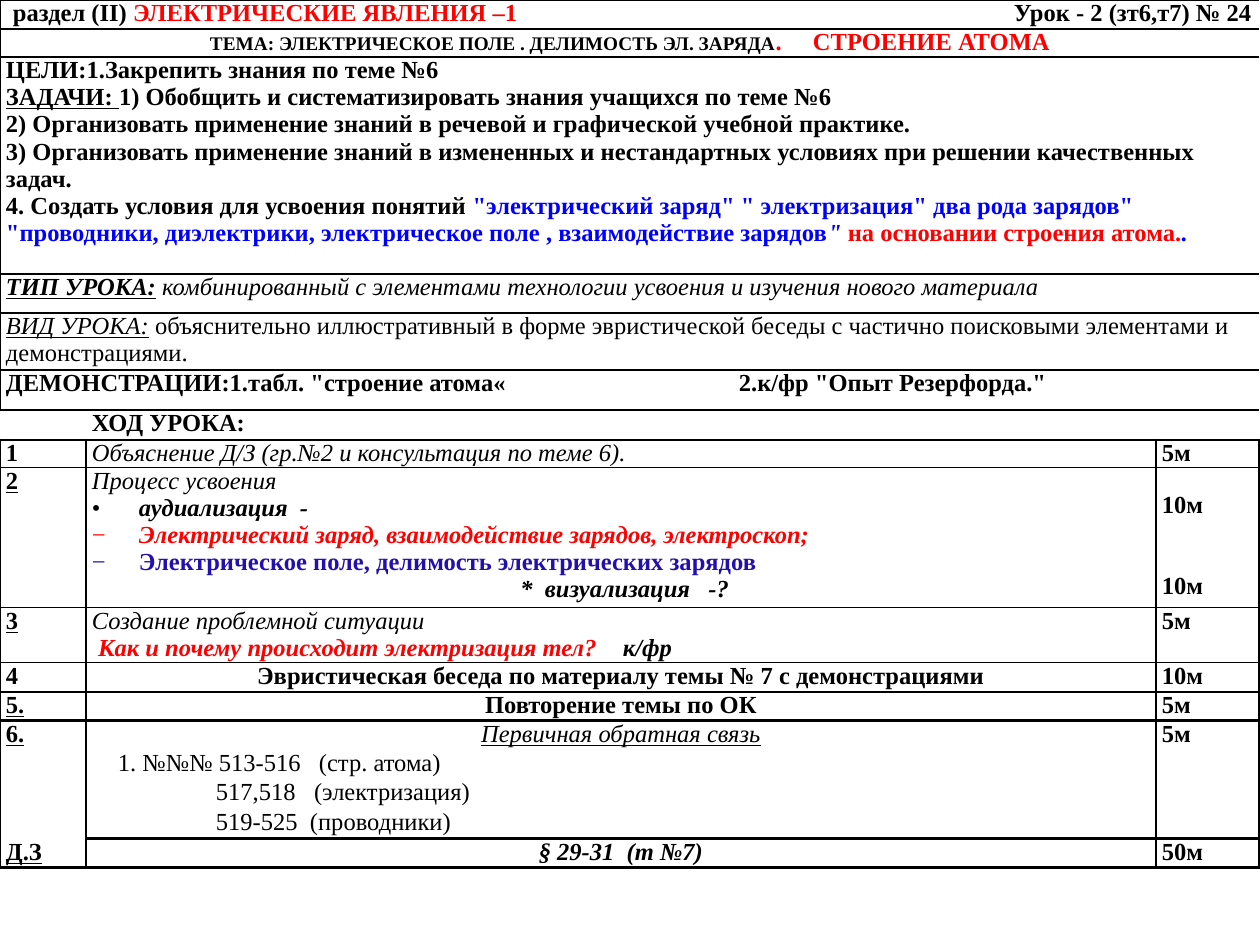
from collections import namedtuple
from dataclasses import dataclass

from lxml import etree
from pptx import Presentation
from pptx.dml.color import RGBColor
from pptx.enum import text
from pptx.oxml import ns
from pptx.util import Emu, Pt

Box = namedtuple("Box", "left top width height")
CENTER = text.PP_ALIGN.CENTER


@dataclass(frozen=True)
class Theme:
    """Typeface, sizes and colours of the lesson plan."""
    font: str = "Times New Roman"
    body: int = 14
    small: int = 11
    thin: float = 1
    thick: float = 1.5
    black: str = "000000"
    red: str = "FF0000"
    blue: str = "0000FF"
    indigo: str = "220FB1"


THEME = Theme()
COLUMNS = (86, 1070, 103)
ROWS = (29, 28, 217, 39, 57, 40, 29, 28, 140, 55, 29, 29, 118, 29)
THICK_EDGES = {1, 2, 6, 7, 11, 12, 13, 14}
HEADER_ROWS = 6
HEADING_ROW = 6
THICK_STEPS = range(7, 10)
FEEDBACK_ROW = 12


def px(value):
    """Turn pixels into EMU."""
    return Emu(round(value * 914400 / 126))


def add_span(para, content, style="", color=THEME.black, size=THEME.body):
    """Add one run; style letters are b, i and u."""
    span = para.add_run()
    span.text = content
    font = span.font
    font.name, font.size = THEME.font, Pt(size)
    font.bold, font.italic, font.underline = ("b" in style, "i" in style, "u" in style)
    font.color.rgb = RGBColor.from_string(color)


def add_para(cell, *spans, align=None, left=0, indent=0, bullet=None, before=0, spacing=None):
    """Write the next paragraph of a cell."""
    frame = cell.text_frame
    para = frame.add_paragraph() if frame.paragraphs[0].runs else frame.paragraphs[0]
    for span in spans:
        add_span(para, *span)
    para.alignment = align
    if before:
        para.space_before = px(before)
    if spacing:
        para.line_spacing = spacing
    props = para._p.get_or_add_pPr()
    props.set("marL", str(px(left)))
    props.set("indent", str(px(indent)))
    if bullet:
        etree.SubElement(props, ns.qn("a:buFont")).set("typeface", THEME.font)
        etree.SubElement(props, ns.qn("a:buChar")).set("char", bullet)


def set_border(cell, side, width):
    """Draw one cell edge, or hide it when the width is zero."""
    props = cell._tc.get_or_add_tcPr()
    line = etree.SubElement(props, ns.qn("a:ln" + side))
    line.set("w", str(Pt(width)))
    if not width:
        etree.SubElement(line, ns.qn("a:noFill"))
        return
    fill = etree.SubElement(line, ns.qn("a:solidFill"))
    etree.SubElement(fill, ns.qn("a:srgbClr")).set("val", THEME.black)


def edge_width(edge, column):
    """Give the weight of a horizontal rule."""
    if edge == FEEDBACK_ROW + 1 and column == 0:
        return 0
    return THEME.thick if edge in THICK_EDGES else THEME.thin


def side_width(row, edge):
    """Give the weight of a vertical rule."""
    if row == HEADING_ROW or (row < HEADER_ROWS and edge in (1, 2)):
        return 0
    return THEME.thick if edge == 1 and row in THICK_STEPS else THEME.thin


def add_grid(page, box):
    """Add the ruled, unfilled table with its merged header rows."""
    table = page.shapes.add_table(len(ROWS), len(COLUMNS), *map(px, box)).table
    table.first_row = table.horz_banding = False
    for column, width in zip(table.columns, COLUMNS):
        column.width = px(width)
    for r, height in enumerate(ROWS):
        table.rows[r].height = px(height)
        for c in range(len(COLUMNS)):
            cell = table.cell(r, c)
            cell.margin_left = cell.margin_right = px(6)
            cell.margin_top = cell.margin_bottom = 0
            set_border(cell, "L", side_width(r, c))
            set_border(cell, "R", side_width(r, c + 1))
            set_border(cell, "T", edge_width(r, c))
            set_border(cell, "B", edge_width(r + 1, c))
            cell.fill.background()
            end = etree.SubElement(cell.text_frame.paragraphs[0]._p, ns.qn("a:endParaRPr"))
            end.set("sz", str(THEME.body * 100))
    for r in range(HEADER_ROWS):
        table.cell(r, 0).merge(table.cell(r, len(COLUMNS) - 1))
    return table


def fill_header(table):
    """Write the section, topic, goals and lesson type."""
    section, topic, goals, kind, form, demos = (table.cell(r, 0) for r in range(HEADER_ROWS))
    add_para(section, ("раздел (II) ", "b"), ("ЭЛЕКТРИЧЕСКИЕ ЯВЛЕНИЯ –1", "b", THEME.red),
             ("\t" * 8 + "Урок - 2 (зт6,т7) № 24", "b"), indent=7)
    add_para(topic, ("ТЕМА: ЭЛЕКТРИЧЕСКОЕ ПОЛЕ . ДЕЛИМОСТЬ ЭЛ. ЗАРЯДА", "b", THEME.black, THEME.small),
             (".\tСТРОЕНИЕ АТОМА", "b", THEME.red), left=240, indent=-36)
    add_para(goals, ("ЦЕЛИ:1.Закрепить знания по теме №6", "b"))
    add_para(goals, ("ЗАДАЧИ: ", "bu"),
             ("1) Обобщить и систематизировать знания учащихся по теме №6", "b"))
    add_para(goals, ("2) Организовать применение знаний в речевой и графической учебной практике.", "b"))
    add_para(goals, ("3) Организовать применение знаний в измененных и нестандартных условиях "
                     "при решении качественных задач.", "b"))
    add_para(goals, ("4. Создать условия для усвоения понятий ", "b"),
             ('"электрический заряд" " электризация" два рода зарядов" "проводники, диэлектрики, '
              'электрическое поле , взаимодействие зарядов', "b", THEME.blue),
             ('" ', "bi", THEME.blue), ("на основании строения атома.", "b", THEME.red),
             (".", "bi", THEME.blue))
    add_para(kind, ("ТИП УРОКА:", "biu"),
             (" комбинированный с элементами технологии усвоения и изучения нового материала", "i"))
    add_para(form, ("ВИД УРОКА:", "iu"),
             (" объяснительно иллюстративный в форме эвристической беседы "
              "с частично поисковыми элементами и демонстрациями.",))
    add_para(demos, ('ДЕМОНСТРАЦИИ:1.табл. "строение атома«', "b"),
             ("\t" * 4 + '2.к/фр "Опыт Резерфорда."', "b"), left=40, indent=-40)


def fill_margins(table):
    """Write the step numbers and the minutes."""
    steps = (("1", "b", "5м"), ("2", "bu", None), ("3", "bu", "5м"), ("4", "b", "10м"),
             ("5.", "bu", "5м"), ("6.", "bu", "5м"), ("Д.З", "bu", "50м"))
    for r, (number, style, minutes) in enumerate(steps, HEADING_ROW + 1):
        add_para(table.cell(r, 0), (number, style))
        if minutes:
            add_para(table.cell(r, 2), (minutes, "b"))
    learning = table.cell(8, 2)
    learning.margin_top = px(24)
    add_para(learning, ("10м", "b"))
    add_para(learning, ("10м", "b"), before=54)


def fill_steps(table):
    """Write the course of the lesson."""
    heading, homework, learning, problem, talk, review, feedback, reading = (
        table.cell(r, 1) for r in range(HEADING_ROW, len(ROWS)))
    add_para(heading, ("ХОД УРОКА:", "b"))
    add_para(homework, ("Объяснение Д/З (гр.№2 и консультация по теме 6).", "i"))
    add_para(learning, ("Процесс усвоения", "i"))
    for bullet, *span in (
            ("•", "аудиализация  -", "bi"),
            ("−", "Электрический заряд, взаимодействие зарядов, электроскоп;", "bi", THEME.red),
            ("−", "Электрическое поле, делимость электрических зарядов", "b", THEME.indigo)):
        add_para(learning, span, left=47, indent=-47, bullet=bullet)
    add_para(learning, ("*  визуализация   -? ", "bi"), align=CENTER, left=14)
    add_para(problem, ("Создание проблемной ситуации", "i"))
    add_para(problem, (" Как и почему происходит электризация тел?", "bi", THEME.red),
             ("\tк/фр", "bi"), left=27, indent=-27)
    add_para(talk, ("Эвристическая беседа по материалу темы № 7 с демонстрациями", "b"), align=CENTER)
    add_para(review, ("Повторение темы по ОК", "b"), align=CENTER)
    add_para(feedback, ("Первичная обратная связь", "iu"), align=CENTER)
    for content, indent in (("1. №№№ 513-516   (стр. атома)", 26),
                            ("517,518   (электризация)", 124), ("519-525  (проводники)", 124)):
        add_para(feedback, (content,), indent=indent, spacing=1.08)
    add_para(reading, ("§ 29-31  (т №7)", "bi"), align=CENTER)


def main():
    """Build the lesson plan slide."""
    deck = Presentation()
    deck.slide_width, deck.slide_height = px(1260), px(945)
    page = deck.slides.add_slide(deck.slide_layouts[6])
    table = add_grid(page, Box(0, 0, sum(COLUMNS), sum(ROWS)))
    fill_header(table)
    fill_margins(table)
    fill_steps(table)
    deck.save("out.pptx")


if __name__ == "__main__":
    main()
